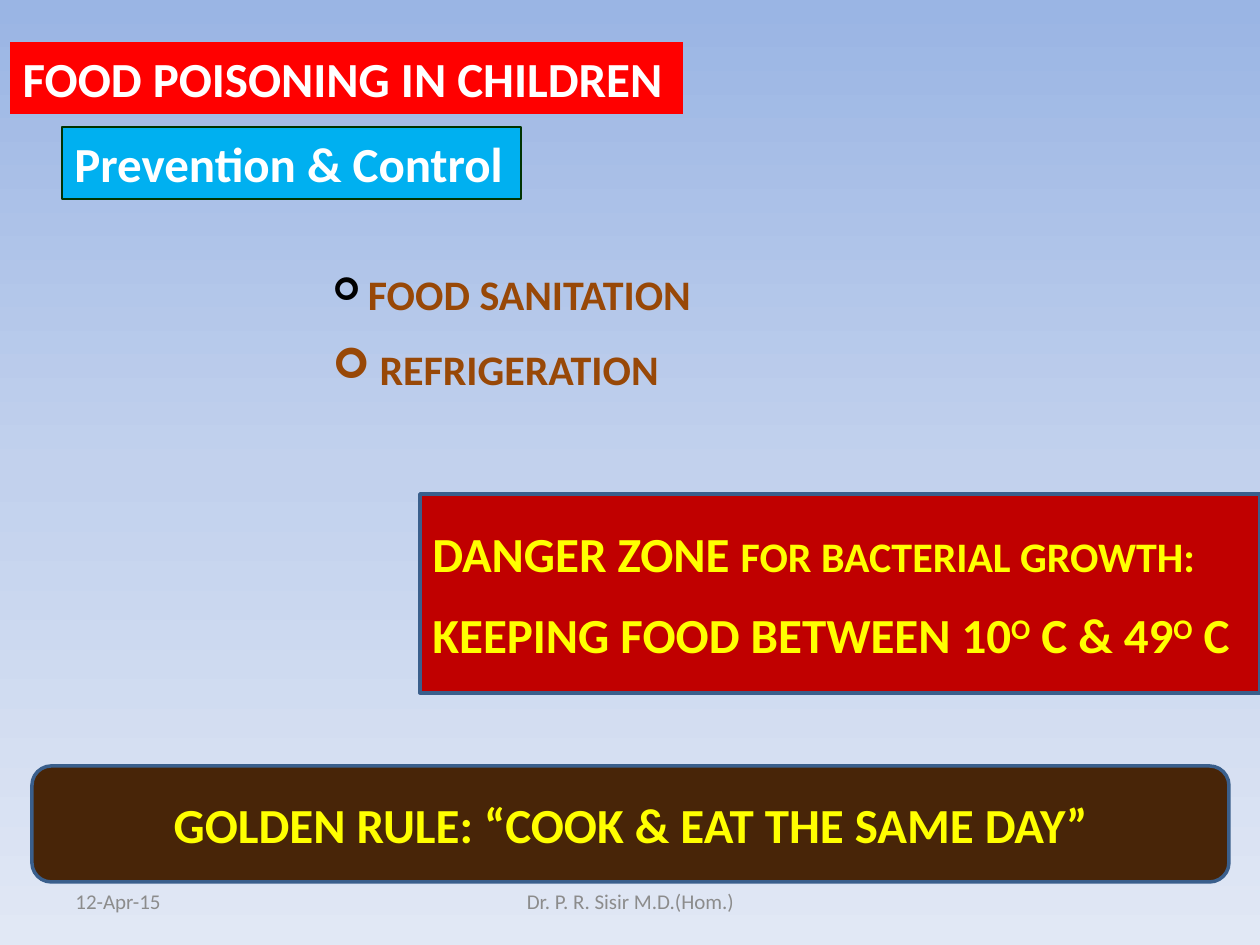
from copy import deepcopy
from pptx import Presentation, util as u
from pptx.dml.color import RGBColor
from pptx.enum import shapes, text
from pptx.oxml import parse_xml
from pptx.oxml.ns import nsdecls

PX = 914400 / 126
WHITE, BLACK = RGBColor(255, 255, 255), RGBColor(0, 0, 0)
RED, SKY = RGBColor(255, 0, 0), RGBColor(0, 176, 240)
CRIMSON, BROWN = RGBColor(192, 0, 0), RGBColor(0x48, 0x25, 0x08)
YELLOW, RUST = RGBColor(255, 255, 0), RGBColor(0x98, 0x48, 0x07)
GREEN, STEEL = RGBColor(0, 0x33, 0), RGBColor(0x3A, 0x5F, 0x8C)
GREY = RGBColor(0x8C, 0x8C, 0x8C)
BACKDROP = [(0, RGBColor(0x9A, 0xB5, 0xE4)), (0.5, RGBColor(0xC2, 0xD1, 0xED)),
            (1, RGBColor(0xE1, 0xE8, 0xF5))]

HEADING = {"size": 28, "color": WHITE, "bold": True}
ALERT = {"size": 28, "color": YELLOW, "bold": True}
ALERT_SMALL = {**ALERT, "size": 24}
RAISED = {**ALERT, "raised": True}
MEASURE = {"size": 24, "color": RUST, "bold": True}
BULLET_GAP = {"size": 18, "color": BLACK, "bold": False}
FOOTNOTE = {"size": 12, "color": GREY, "bold": False}

TITLE = [[("FOOD POISONING IN CHILDREN", HEADING)]]
SUBTITLE = [[("Prevention & Control", HEADING)]]
MEASURES = [[(" ", BULLET_GAP), ("FOOD SANITATION", MEASURE)],
            [(" REFRIGERATION", MEASURE)]]
DANGER = [[("DANGER ZONE ", ALERT), ("FOR BACTERIAL GROWTH:", ALERT_SMALL)],
          [("KEEPING FOOD BETWEEN 10", ALERT), ("O", RAISED), (" C & 49", ALERT),
           ("O", RAISED), (" C", ALERT)]]
GOLDEN_RULE = [[("GOLDEN RULE: “COOK & EAT THE SAME DAY”", ALERT)]]
DATE = [[("12-Apr-15", FOOTNOTE)]]
AUTHOR = [[("Dr. P. R. Sisir M.D.(Hom.)", FOOTNOTE)]]

LEFT, CENTER = text.PP_ALIGN.LEFT, text.PP_ALIGN.CENTER
TOP, MIDDLE = text.MSO_ANCHOR.TOP, text.MSO_ANCHOR.MIDDLE


def place(part, box):
    for side, length in zip(("left", "top", "width", "height"), box):
        setattr(part, side, round(length * PX))


def paint(part, fill, line=None, width=0):
    part.fill.solid()
    part.fill.fore_color.rgb = fill
    if line is None:
        part.line.fill.background()
    else:
        part.line.color.rgb = line
        part.line.width = u.Pt(width)


def write(part, paragraphs, align=LEFT, anchor=MIDDLE, wrap=True, gap=0):
    frame = part.text_frame
    layout = {"auto_size": text.MSO_AUTO_SIZE.NONE, "word_wrap": wrap,
              "vertical_anchor": anchor}
    for name, value in layout.items():
        setattr(frame, name, value)
    for i, runs in enumerate(paragraphs):
        paragraph = frame.add_paragraph() if i else frame.paragraphs[0]
        paragraph.alignment = align
        paragraph.space_before = u.Pt(gap if i else 0)
        for words, style in runs:
            run = paragraph.add_run()
            run.text = words
            font = {"name": "Calibri", "size": u.Pt(style["size"]), "bold": style["bold"]}
            for name, value in font.items():
                setattr(run.font, name, value)
            run.font.color.rgb = style["color"]
            if style.get("raised"):
                run.font._element.set("baseline", "30000")


def add_panel(slide, kind, box):
    panel = slide.shapes.add_shape(kind, 0, 0, 0, 0)
    panel.shadow.inherit = False
    place(panel, box)
    return panel


def main():
    deck = Presentation()
    deck.slide_width, deck.slide_height = u.Inches(10), u.Inches(7.5)
    slide = deck.slides.add_slide(deck.slide_layouts[1])

    backdrop = slide.background.fill
    backdrop.gradient()
    backdrop.gradient_angle = 270
    stops = slide._element.xpath(".//a:gsLst")[0]
    stops.append(deepcopy(stops[-1]))
    for stop, (position, color) in zip(backdrop.gradient_stops, BACKDROP):
        stop.position = position
        stop.color.rgb = color

    for words, box, align in ((DATE, (63, 876, 294, 50), LEFT),
                              (AUTHOR, (431, 876, 399, 50), CENTER)):
        footnote = slide.shapes.add_textbox(0, 0, 0, 0)
        place(footnote, box)
        write(footnote, words, align)

    title = slide.shapes.title
    place(title, (10, 42, 673, 72))
    paint(title, RED)
    write(title, TITLE, anchor=TOP, wrap=False)

    subtitle = add_panel(slide, shapes.MSO_SHAPE.RECTANGLE, (62, 127, 459, 72))
    paint(subtitle, SKY, GREEN, 0.75)
    write(subtitle, SUBTITLE, anchor=TOP, wrap=False)

    measures = slide.placeholders[1]
    place(measures, (320, 262, 384, 140))
    write(measures, MEASURES, anchor=TOP, wrap=False, gap=14)
    for paragraph in measures.text_frame.paragraphs:
        properties = paragraph._p.get_or_add_pPr()
        properties.set("marL", "0")
        properties.set("indent", "0")
        for tag in ('buFont {} typeface="Wingdings"', 'buChar {} char="➢"'):
            properties.append(parse_xml(f"<a:{tag.format(nsdecls('a'))}/>"))

    danger = add_panel(slide, shapes.MSO_SHAPE.RECTANGLE, (420, 494, 840, 199))
    paint(danger, CRIMSON, STEEL, 2)
    write(danger, DANGER, gap=13)

    golden_rule = add_panel(slide, shapes.MSO_SHAPE.ROUNDED_RECTANGLE, (32, 766, 1197, 116))
    paint(golden_rule, BROWN, STEEL, 2)
    write(golden_rule, GOLDEN_RULE, CENTER)

    deck.save("out.pptx")


if __name__ == "__main__":
    main()
